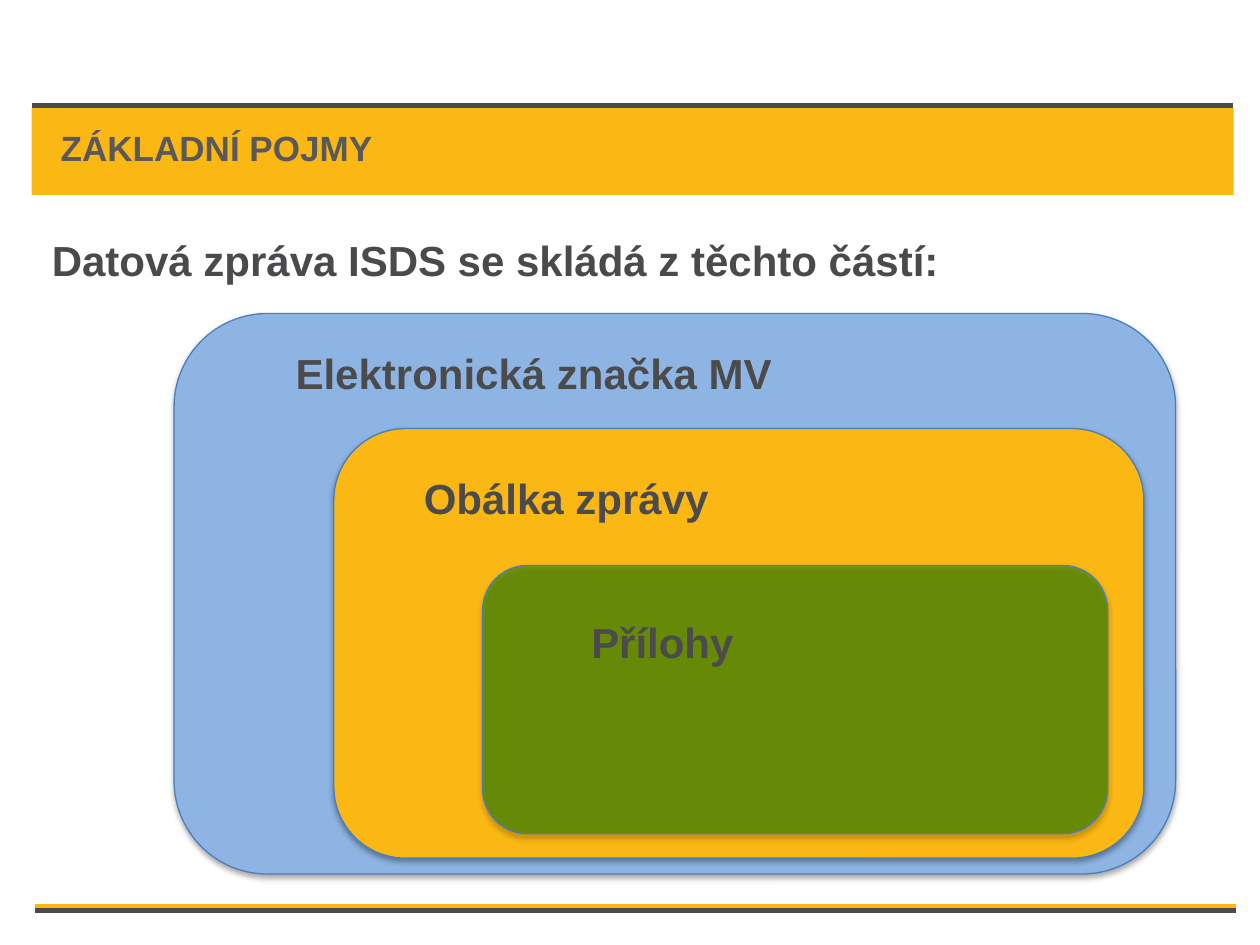
"""Build the slide on the nested parts of an ISDS data message."""
from lxml import etree
from pptx import Presentation
from pptx import util as u
from pptx.dml.color import RGBColor
from pptx.enum import shapes, text
from pptx.oxml import ns

COLOURS = {
    "yellow": "FBB714", "dark": "4A4A4C", "title": "595959", "label": "4B4B4B",
    "blue": "8EB4E3", "green": "008000", "outline": "4B7EBC", "shadow": "000000",
}
FRAME = {"word_wrap": True, "auto_size": text.MSO_AUTO_SIZE.NONE}
FONT = {"name": "Arial", "bold": True}


def colour(name):
    return RGBColor.from_string(COLOURS[name])


def set_values(target, values):
    for name, value in values.items():
        setattr(target, name, value)


def add_element(parent, tag, **attributes):
    return etree.SubElement(parent, ns.qn(tag), attributes)


def place(shape, box):
    set_values(shape, dict(zip(("left", "top", "width", "height"), map(u.Cm, box))))


def write(shape, words, size, colour_name, anchor, alignment):
    frame = shape.text_frame
    frame.text = words
    set_values(frame, {**FRAME, "vertical_anchor": anchor})
    paragraph = frame.paragraphs[0]
    set_values(paragraph, {"alignment": alignment, "space_before": u.Pt(0)})
    font = paragraph.runs[0].font
    set_values(font, {**FONT, "size": u.Pt(size)})
    font.color.rgb = colour(colour_name)


def fill_placeholder(shape, box, words, size, colour_name, anchor):
    place(shape, box)
    shape.element.getparent().append(shape.element)
    write(shape, words, size, colour_name, anchor, text.PP_ALIGN.LEFT)


def remove_bullet(paragraph):
    properties = paragraph._p.get_or_add_pPr()
    set_values(paragraph, {"level": 0})
    properties.set("marL", "0")
    properties.set("indent", "0")
    add_element(properties, "a:buNone")


def add_rule(slide, left, top, width, colour_name, weight):
    rule = slide.shapes.add_connector(
        shapes.MSO_CONNECTOR.STRAIGHT, u.Cm(left), u.Cm(top), u.Cm(left + width), u.Cm(top))
    rule.line.color.rgb = colour(colour_name)
    rule.line.width = u.Pt(weight)
    add_element(rule.element.spPr, "a:effectLst")


def add_block(slide, kind, box, fill):
    block = slide.shapes.add_shape(kind, *map(u.Cm, box))
    block.shadow.inherit = False
    block.fill.solid()
    block.fill.fore_color.rgb = colour(fill)
    block.line.fill.background()
    return block


def add_layer(slide, box, fill, opacity=None):
    layer = add_block(slide, shapes.MSO_SHAPE.ROUNDED_RECTANGLE, box, fill)
    layer.line.color.rgb = colour("outline")
    layer.line.width = u.Pt(0.75)
    properties = layer.element.spPr
    if opacity:
        fill_colour = properties.find(ns.qn("a:solidFill"))[0]
        add_element(fill_colour, "a:alpha", val=str(opacity * 1000))
    shadow = add_element(
        properties.find(ns.qn("a:effectLst")), "a:outerShdw",
        blurRad=str(u.Pt(3.1)), dist=str(u.Pt(1.8)), dir="5400000", rotWithShape="0")
    shade = add_element(shadow, "a:srgbClr", val=COLOURS["shadow"])
    add_element(shade, "a:alpha", val="35000")


def add_label(slide, box, words):
    label = slide.shapes.add_textbox(*map(u.Cm, box))
    write(label, words, 24, "label", text.MSO_ANCHOR.TOP, text.PP_ALIGN.CENTER)


def main():
    presentation = Presentation()
    presentation.slide_width, presentation.slide_height = u.Cm(25.4), u.Cm(19.05)
    slide = presentation.slides.add_slide(presentation.slide_layouts[1])
    title, body = slide.placeholders

    add_block(slide, shapes.MSO_SHAPE.RECTANGLE, (0.64, 2.18, 24.23, 1.75), "yellow")
    for left, top, colour_name, weight in (
            (0.64, 2.13, "dark", 3), (0.71, 18.26, "yellow", 2), (0.71, 18.36, "dark", 3)):
        add_rule(slide, left, top, 24.21, colour_name, weight)

    fill_placeholder(title, (0.97, 2.29, 23.44, 1.35), "ZÁKLADNÍ POJMY",
                     20, "title", text.MSO_ANCHOR.MIDDLE)
    fill_placeholder(body, (0.79, 4.6, 23.42, 1.7),
                     "Datová zpráva ISDS se skládá z těchto částí:",
                     24, "dark", text.MSO_ANCHOR.TOP)
    remove_bullet(body.text_frame.paragraphs[0])

    for box, fill, opacity, label_box, words in (
            ((3.51, 6.32, 20.19, 11.3), "blue", None,
             (4.37, 6.88, 12.78, 1.47), "Elektronická značka MV"),
            ((6.73, 8.64, 16.33, 8.66), "yellow", None,
             (7.49, 9.4, 7.85, 1.47), "Obálka zprávy"),
            ((9.73, 11.4, 12.6, 5.41), "green", 50,
             (10.74, 12.3, 5.23, 1.47), "Přílohy")):
        add_layer(slide, box, fill, opacity)
        add_label(slide, label_box, words)

    presentation.save("out.pptx")


if __name__ == "__main__":
    main()
